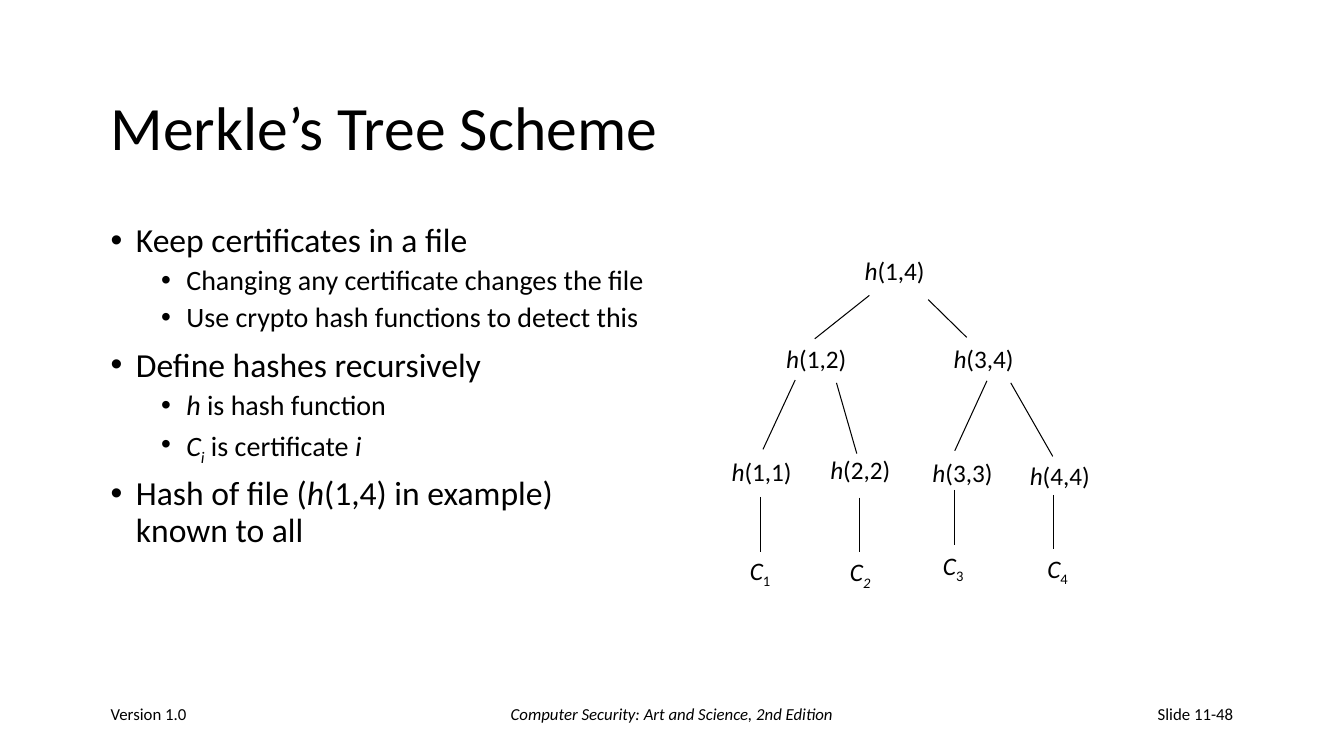
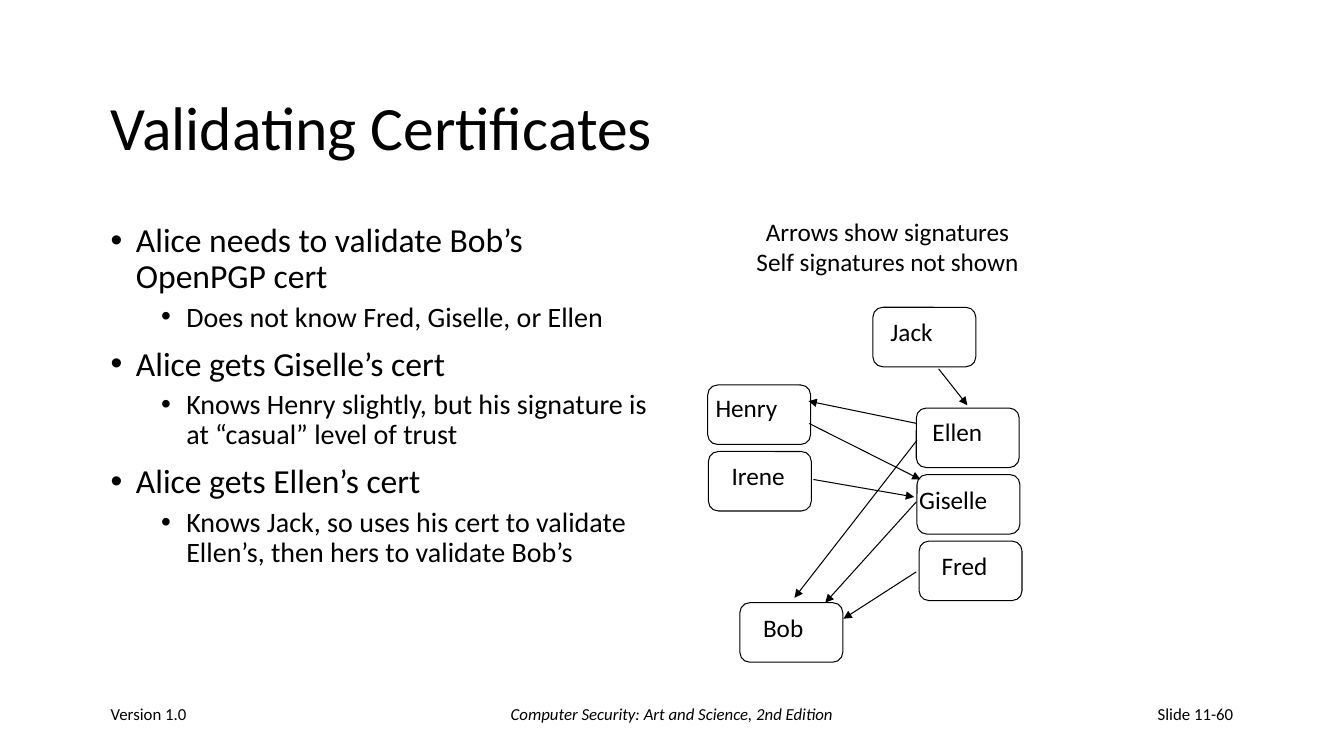
from dataclasses import dataclass

from lxml import etree
from pptx import Presentation
from pptx.dml.color import RGBColor
from pptx.enum.shapes import MSO_CONNECTOR, MSO_SHAPE
from pptx.enum.text import MSO_ANCHOR, MSO_AUTO_SIZE, PP_ALIGN
from pptx.oxml.ns import qn
from pptx.util import Pt

LEFT, CENTER, RIGHT = PP_ALIGN.LEFT, PP_ALIGN.CENTER, PP_ALIGN.RIGHT
TOP, MIDDLE = MSO_ANCHOR.TOP, MSO_ANCHOR.MIDDLE
FIT = MSO_AUTO_SIZE.SHAPE_TO_FIT_TEXT
STRAIGHT = MSO_CONNECTOR.STRAIGHT
ROUNDED = MSO_SHAPE.ROUNDED_RECTANGLE


@dataclass(frozen=True)
class Theme:
    font: str = "Calibri"
    bullet_font: str = "Arial"
    ink: RGBColor = RGBColor(0, 0, 0)
    title: float = 44
    bullets: tuple = (24, 20)
    label: float = 18
    footer: float = 12
    indents: tuple = (18, 54)
    hanging: float = 18
    gaps: tuple = (10, 5)
    leading: float = 0.9
    line: float = 0.75


THEME = Theme()
LABEL_H = 29
NODE_W, NODE_H = 73.5, 42.5
STEM = 39

TREE_BULLETS = [
    (0, "Keep certificates in a file"),
    (1, "Changing any certificate changes the file"),
    (1, "Use crypto hash functions to detect this"),
    (0, "Define hashes recursively"),
    (1, [("h", "i"), (" is hash function", "")]),
    (1, [("C", "i"), ("i", "is"), (" is certificate ", ""), ("i", "i")]),
    (0, [("Hash of file (", ""), ("h", "i"),
         ("(1,4) in example) known to all", "")]),
]
HASHES = [
    ("(1,4)", 610.5, 179, 60),
    ("(1,2)", 554.5, 242, 60),
    ("(3,4)", 674, 242, 60),
    ("(1,1)", 515.5, 322.5, 60),
    ("(2,2)", 586, 321, 58),
    ("(3,3)", 659, 323, 58),
    ("(4,4)", 728.5, 325, 58),
]
BRANCHES = [
    (621, 211, 582, 242),
    (663, 214, 690.5, 241),
    (568, 271.5, 545, 321),
    (597.5, 273.5, 612, 324),
    (705, 272, 682, 322),
    (722, 273.5, 752, 326),
]
STEMS = [(543, 355), (614, 355.5), (682, 350), (752.5, 353.5)]
CERTIFICATES = [
    ("1", "s", 528.5, 393),
    ("2", "is", 600, 394),
    ("3", "s", 666.5, 389.5),
    ("4", "s", 741, 391.5),
]

VALIDATION_BULLETS = [
    (0, "Alice needs to validate Bob’s OpenPGP cert"),
    (1, "Does not know Fred, Giselle, or Ellen"),
    (0, "Alice gets Giselle’s cert"),
    (1, "Knows Henry slightly, but his signature is at “casual” level of trust"),
    (0, "Alice gets Ellen’s cert"),
    (1, "Knows Jack, so uses his cert to validate Ellen’s, "
        "then hers to validate Bob’s"),
]
SIGNERS = [
    ("Jack", 623.5, 219.5, 629, 222.5, 44.5),
    ("Henry", 505.5, 275, 504, 277, 59),
    ("Ellen", 654.5, 291.5, 659, 294, 50.5),
    ("Irene", 506, 322.5, 515.5, 325.5, 53),
    ("Giselle", 655, 339, 649.5, 342.5, 64),
    ("Fred", 656.5, 386.5, 665.5, 389.5, 47.5),
    ("Bob", 528.5, 430.5, 538, 433.5, 44),
]
SIGNATURES = [
    (670.5, 263.5, 691, 289.5),
    (655, 302.5, 577.5, 286.5),
    (578, 302.5, 657.5, 342.5),
    (581, 342.5, 653, 355),
    (655, 314.5, 567.5, 427),
    (654.5, 358.5, 589.5, 430.5),
    (654.5, 408.5, 602.5, 442),
]


def write(p, content, size):
    runs = [(content, "")] if isinstance(content, str) else content
    for text, style in runs:
        r = p.add_run()
        r.text = text
        r.font.name = THEME.font
        r.font.size = Pt(size)
        r.font.color.rgb = THEME.ink
        r.font.italic = "i" in style
        if "s" in style:
            r._r.get_or_add_rPr().set("baseline", "-25000")


def add_text(s, box, lines, size, align=LEFT, anchor=TOP, wrap=True):
    tf = s.shapes.add_textbox(*map(Pt, box)).text_frame
    tf.word_wrap = wrap
    tf.vertical_anchor = anchor
    if not wrap:
        tf.auto_size = FIT
    for i, line in enumerate(lines):
        p = tf.paragraphs[0] if i == 0 else tf.add_paragraph()
        p.alignment = align
        write(p, line, size)
    return tf


def add_label(s, x, y, w, content):
    add_text(s, (x, y, w, LABEL_H), [content], THEME.label, wrap=False)


def add_bullets(s, items):
    tf = s.shapes.add_textbox(Pt(72), Pt(156), Pt(400), Pt(324)).text_frame
    tf.word_wrap = True
    for i, (level, content) in enumerate(items):
        p = tf.paragraphs[0] if i == 0 else tf.add_paragraph()
        pPr = p._p.get_or_add_pPr()
        pPr.set("marL", str(Pt(THEME.indents[level])))
        pPr.set("indent", str(-Pt(THEME.hanging)))
        etree.SubElement(pPr, qn("a:buFont"), typeface=THEME.bullet_font)
        etree.SubElement(pPr, qn("a:buChar"), char="•")
        p.level = level
        p.line_spacing = THEME.leading
        p.space_before = Pt(THEME.gaps[level] if i else 0)
        write(p, content, THEME.bullets[level])


def add_line(s, ends, arrow=False):
    c = s.shapes.add_connector(STRAIGHT, *map(Pt, ends))
    c.line.color.rgb = THEME.ink
    c.line.width = Pt(THEME.line)
    if arrow:
        etree.SubElement(c.line._get_or_add_ln(), qn("a:tailEnd"),
                         type="triangle")
    etree.SubElement(c._element.spPr, qn("a:effectLst"))


def add_node(s, x, y):
    sp = s.shapes.add_shape(ROUNDED, Pt(x), Pt(y), Pt(NODE_W), Pt(NODE_H))
    sp.shadow.inherit = False
    sp.fill.background()
    sp.line.color.rgb = THEME.ink
    sp.line.width = Pt(THEME.line)


def add_content_slide(prs, title, bullets, number):
    s = prs.slides.add_slide(prs.slide_layouts[6])
    tf = add_text(s, (72, 48, 816, 90), [title], THEME.title, anchor=MIDDLE)
    tf.paragraphs[0].line_spacing = THEME.leading
    add_bullets(s, bullets)
    book = [("Computer Security: Art and Science, 2nd Edition", "i")]
    for x, w, content, align in [
        (72, 200, "Version 1.0", LEFT),
        (328, 304, book, CENTER),
        (688, 200, f"Slide {number}", RIGHT),
    ]:
        add_text(s, (x, 492, w, 36), [content], THEME.footer, align, MIDDLE)
    return s


def add_hash_tree(s):
    for ends in BRANCHES:
        add_line(s, ends)
    for x, y in STEMS:
        add_line(s, (x, y, x, y + STEM))
    for span, x, y, w in HASHES:
        add_label(s, x, y, w, [("h", "i"), (span, "")])
    for index, style, x, y in CERTIFICATES:
        add_label(s, x, y, 30, [("C", "i"), (index, style)])


def add_signature_graph(s):
    add_text(s, (532, 151, 204, 51),
             ["Arrows show signatures", "Self signatures not shown"],
             THEME.label, CENTER, wrap=False)
    for name, x, y, label_x, label_y, label_w in SIGNERS:
        add_node(s, x, y)
        add_label(s, label_x, label_y, label_w, name)
    for ends in SIGNATURES:
        add_line(s, ends, arrow=True)


def main():
    prs = Presentation()
    prs.slide_width, prs.slide_height = Pt(960), Pt(540)
    add_hash_tree(add_content_slide(
        prs, "Merkle’s Tree Scheme", TREE_BULLETS, "11-48"))
    add_signature_graph(add_content_slide(
        prs, "Validating Certificates", VALIDATION_BULLETS, "11-60"))
    prs.save("out.pptx")


if __name__ == "__main__":
    main()
